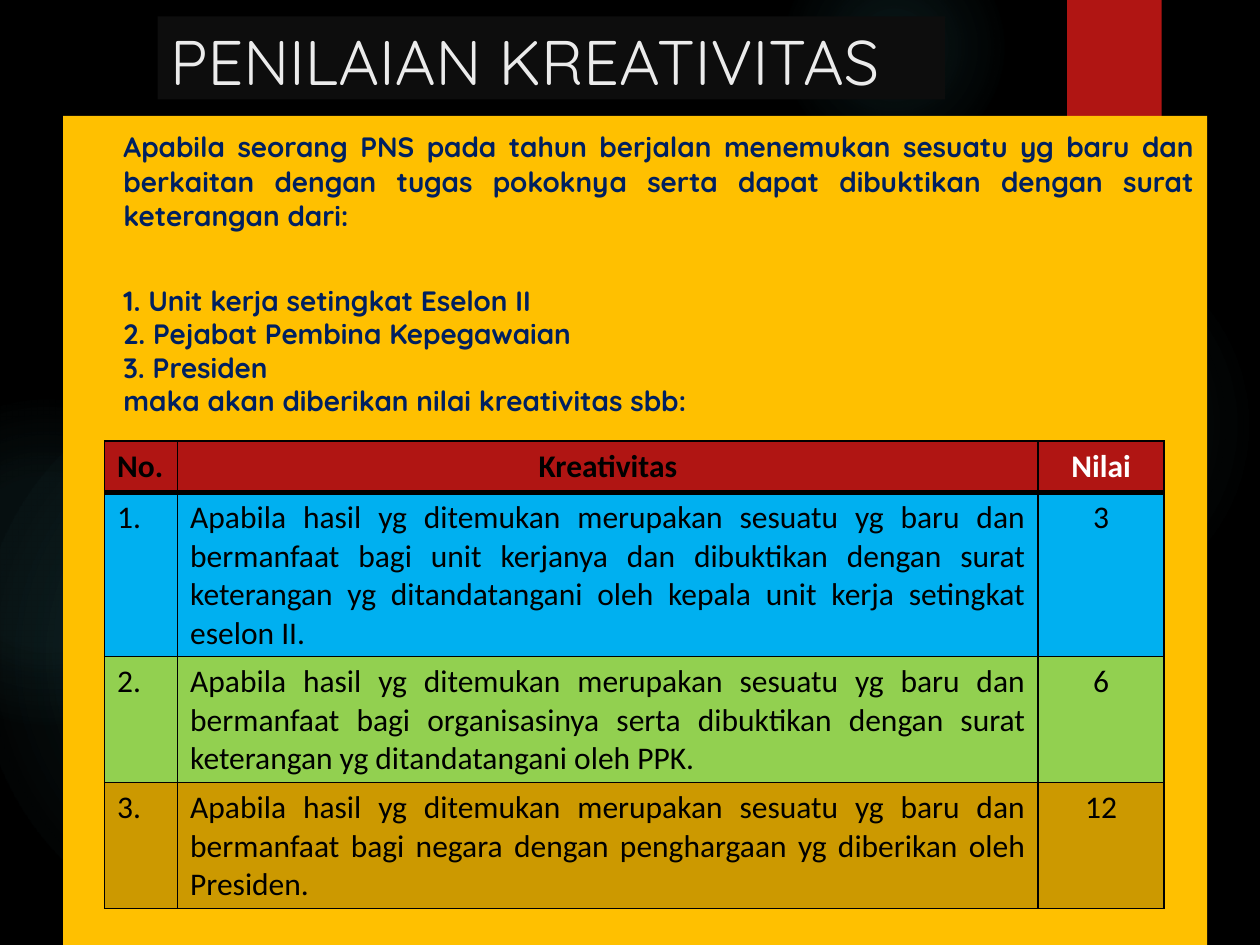
from lxml.etree import SubElement
from pptx import Presentation
from pptx.dml.color import RGBColor
from pptx.enum.shapes import MSO_SHAPE
from pptx.enum.text import MSO_ANCHOR, MSO_AUTO_SIZE, PP_ALIGN
from pptx.oxml import parse_xml
from pptx.oxml.ns import nsdecls, qn
from pptx.util import Inches, Pt

GLOWS = [
    ((6.89, 1.83, 3.08), ((0, 7), (36, 6), (69, 0))),
    ((6.22, -0.5, 1.75), ((0, 14), (36, 7), (73, 0))),
    ((6.89, 6.67, 1.08), ((0, 9), (36, 5), (66, 0))),
    ((-0.17, 2.92, 4.58), ((0, 11), (36, 10), (75, 0))),
    ((-0.92, 3.17, 2.58), ((0, 8), (36, 8), (72, 0))),
]
INTRO = (
    "Apabila seorang PNS pada tahun berjalan menemukan sesuatu yg baru dan "
    "berkaitan dengan tugas pokoknya serta dapat dibuktikan dengan surat "
    "keterangan dari:"
)
ISSUERS = [
    "1. Unit kerja setingkat Eselon II",
    "2. Pejabat Pembina Kepegawaian",
    "3. Presiden",
    "maka akan diberikan nilai kreativitas sbb:",
]
FINDING = "Apabila hasil yg ditemukan merupakan sesuatu yg baru dan bermanfaat bagi "
ROWS = [
    ("No.", "Kreativitas", "Nilai"),
    ("1.", FINDING + "unit kerjanya dan dibuktikan dengan surat keterangan yg "
     "ditandatangani oleh kepala unit kerja setingkat eselon II.", "3"),
    ("2.", FINDING + "organisasinya serta dibuktikan dengan surat keterangan yg "
     "ditandatangani oleh PPK.", "6"),
    ("3.", FINDING + "negara dengan penghargaan yg diberikan oleh Presiden.", "12"),
]
ROW_FILLS = ["B01513", "00B0F0", "92D050", "CC9900"]
ROW_HEIGHTS = [0.41, 1.3, 1, 1]
COLUMN_WIDTHS = [0.58, 6.83, 1]


def color(value):
    return RGBColor.from_string(value)


def paint(target, value):
    target.fill.solid()
    target.fill.fore_color.rgb = color(value)


def style_font(font, name, size, value, bold=False):
    font.name = name
    font.size = Pt(size)
    font.bold = bold
    font.color.rgb = color(value)


def add_plain_shape(page, kind, left, top, width, height, fill):
    shape = page.shapes.add_shape(
        kind, Inches(left), Inches(top), Inches(width), Inches(height))
    shape.shadow.inherit = False
    shape.line.fill.background()
    paint(shape, fill)
    return shape


def add_glow(page, place, stops):
    left, top, size = place
    glow = add_plain_shape(page, MSO_SHAPE.OVAL, left, top, size, size, "50B9C1")
    stop_xml = "".join(
        f'<a:gs pos="{position * 1000}"><a:srgbClr val="50B9C1">'
        f'<a:alpha val="{alpha * 1000}"/></a:srgbClr></a:gs>'
        for position, alpha in stops)
    gradient = parse_xml(
        f'<a:gradFill {nsdecls("a")} rotWithShape="1"><a:gsLst>{stop_xml}</a:gsLst>'
        '<a:path path="circle"><a:fillToRect l="50000" t="50000" r="50000" b="50000"/>'
        '</a:path></a:gradFill>')
    properties = glow._element.spPr
    properties.replace(properties.find(qn("a:solidFill")), gradient)


def add_ribbon(page):
    ribbon = add_plain_shape(page, MSO_SHAPE.RECTANGLE, 8.47, 0, 0.75, 1.2, "B01513")
    effects = ribbon._element.spPr.find(qn("a:effectLst"))
    effects.append(parse_xml(
        f'<a:outerShdw {nsdecls("a")} blurRad="{Pt(3)}" dist="{Pt(2)}" dir="5400000">'
        '<a:srgbClr val="000000"><a:alpha val="45000"/></a:srgbClr></a:outerShdw>'))


def set_title(page, text):
    title = page.shapes.title
    page.shapes._spTree.append(title._element)
    title.left, title.top = Inches(1.25), Inches(0.13)
    title.width, title.height = Inches(6.25), Inches(0.66)
    paint(title, "0D0D0D")
    frame = title.text_frame
    frame.text = text
    frame.auto_size = MSO_AUTO_SIZE.NONE
    frame.vertical_anchor = MSO_ANCHOR.TOP
    para = frame.paragraphs[0]
    para.alignment = PP_ALIGN.LEFT
    style_font(para.font, "Quicksand", 36, "EBEBEB")


def add_body(page):
    box = page.shapes.add_textbox(Inches(0.5), Inches(0.92), Inches(9.08), Inches(6.58))
    paint(box, "FFC000")
    frame = box.text_frame
    frame.word_wrap = True
    frame.margin_left = Inches(0.48)
    frame.margin_top = Inches(0.1)
    for index, text in enumerate([INTRO] + ISSUERS):
        para = frame.paragraphs[0] if index == 0 else frame.add_paragraph()
        para.text = text
        para.alignment = PP_ALIGN.JUSTIFY
        para.line_spacing = Pt(19.75 if index == 0 else 19)
        para.space_before = Pt(29.5 if index == 1 else 0)
        style_font(para.font, "Quicksand", 16, "002060", True)


def set_borders(cell, widths):
    properties = cell._tc.get_or_add_tcPr()
    for position, (side, width) in enumerate(widths.items()):
        properties.insert(position, parse_xml(
            f'<a:{side} {nsdecls("a")} w="{Pt(width)}"><a:solidFill>'
            f'<a:srgbClr val="000000"/></a:solidFill></a:{side}>'))


def add_score_table(page):
    table = page.shapes.add_table(
        len(ROWS), len(COLUMN_WIDTHS), Inches(0.83), Inches(3.5),
        Inches(sum(COLUMN_WIDTHS)), Inches(sum(ROW_HEIGHTS))).table
    for column, width in zip(table.columns, COLUMN_WIDTHS):
        column.width = Inches(width)
    for row, height in zip(table.rows, ROW_HEIGHTS):
        row.height = Inches(height)
    for row_index, texts in enumerate(ROWS):
        header = row_index == 0
        alignments = (PP_ALIGN.LEFT, PP_ALIGN.CENTER if header else PP_ALIGN.JUSTIFY,
                      PP_ALIGN.CENTER)
        for column_index, text in enumerate(texts):
            cell = table.cell(row_index, column_index)
            cell.text = text
            paint(cell, ROW_FILLS[row_index])
            para = cell.text_frame.paragraphs[0]
            para.alignment = alignments[column_index]
            ink = "FFFFFF" if header and column_index == 2 else "000000"
            style_font(para.font, "Calibri", 18, ink, header)
            set_borders(cell, {"lnL": 1, "lnR": 1, "lnT": 3 if row_index == 1 else 1,
                               "lnB": 3 if header else 1})


def main():
    deck = Presentation()
    deck.slide_width, deck.slide_height = Inches(10), Inches(7.5)
    page = deck.slides.add_slide(deck.slide_layouts[5])
    paint(page.background, "000000")
    for place, stops in GLOWS:
        add_glow(page, place, stops)
    add_ribbon(page)
    set_title(page, "PENILAIAN KREATIVITAS")
    add_body(page)
    add_score_table(page)
    deck.save("out.pptx")


if __name__ == "__main__":
    main()
